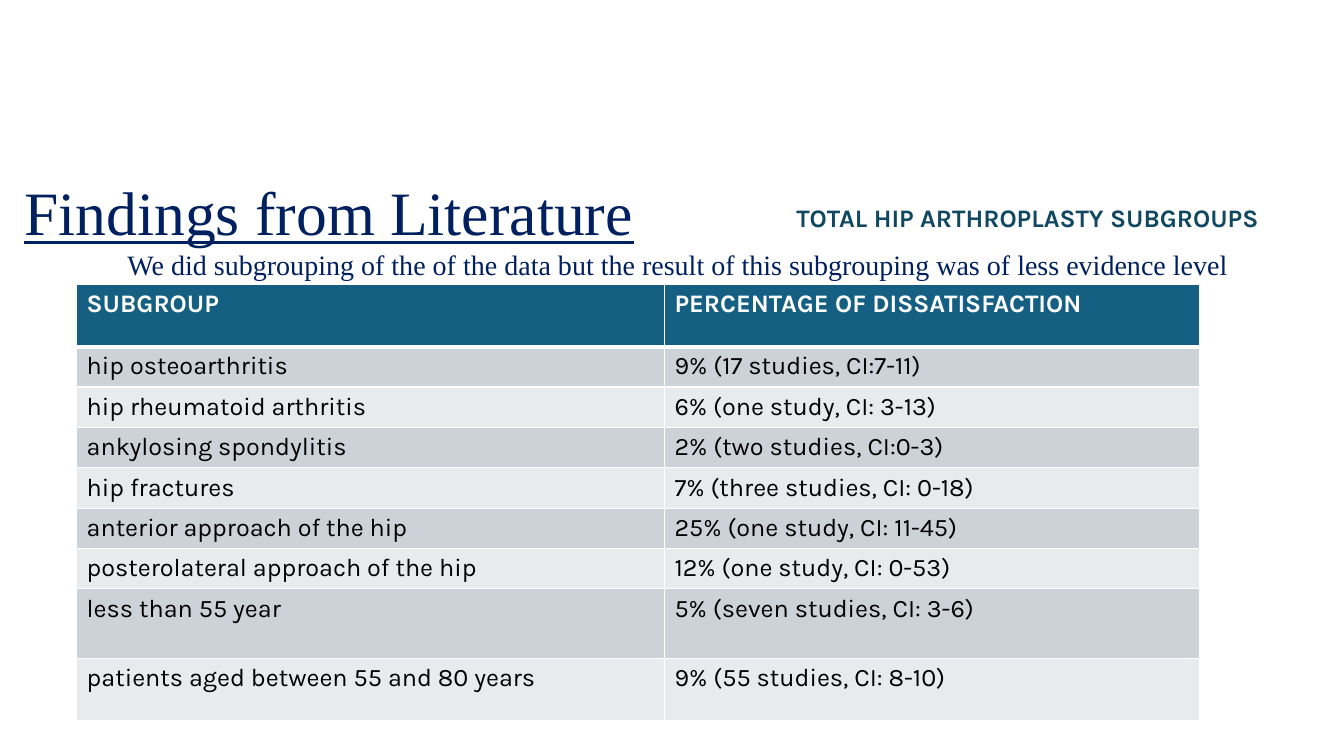
from lxml.etree import SubElement
from pptx import Presentation
from pptx.dml.color import RGBColor
from pptx.enum.text import MSO_ANCHOR, MSO_AUTO_SIZE, PP_ALIGN
from pptx.oxml.ns import qn
from pptx.util import Inches, Pt

NAVY = RGBColor(0x00, 0x20, 0x60)
TEAL = RGBColor(0x10, 0x48, 0x62)
HEADER_BLUE = RGBColor(0x15, 0x60, 0x82)
BAND_DARK = RGBColor(0xCC, 0xD2, 0xD8)
BAND_LIGHT = RGBColor(0xE8, 0xEA, 0xED)
WHITE = RGBColor(0xFF, 0xFF, 0xFF)
BLACK = RGBColor(0x00, 0x00, 0x00)

SERIF = "Times New Roman"
SANS = "Karla"

ROWS = [
    ("SUBGROUP", "PERCENTAGE OF DISSATISFACTION", 0.62),
    ("hip osteoarthritis", "9% (17 studies, CI:7-11)", 0.39),
    ("hip rheumatoid arthritis", "6% (one study, CI: 3-13)", 0.39),
    ("ankylosing spondylitis", "2% (two studies, CI:0-3)", 0.39),
    ("hip fractures", "7% (three studies, CI: 0-18)", 0.39),
    ("anterior approach of the hip", "25% (one study, CI: 11-45)", 0.39),
    ("posterolateral approach of the hip", "12% (one study, CI: 0-53)", 0.39),
    ("less than 55 year", "5% (seven studies, CI: 3-6)", 0.69),
    ("patients aged between 55 and 80 years", "9% (55 studies, CI: 8-10)", 0.62),
]
COLUMN_WIDTHS = (5.83, 5.31)


def write_text(frame, text, *, font, size, color, bold=False, underline=False,
               align=PP_ALIGN.LEFT, line_spacing=1.0):
    para = frame.paragraphs[0]
    para.alignment = align
    para.line_spacing = line_spacing
    span = para.add_run()
    span.text = text
    span.font.name = font
    span.font.size = Pt(size)
    span.font.color.rgb = color
    span.font.bold = bold
    span.font.underline = underline


def set_borders(cell, top, bottom):
    properties = cell._tc.get_or_add_tcPr()
    for side, width in (("L", 1), ("R", 1), ("T", top), ("B", bottom)):
        line = SubElement(properties, qn(f"a:ln{side}"), w=str(Pt(width)))
        fill = SubElement(line, qn("a:solidFill"))
        SubElement(fill, qn("a:srgbClr"), val=str(WHITE))


def place_title(page, left, top, width, height):
    title = page.shapes.title
    title.left, title.top = Inches(left), Inches(top)
    title.width, title.height = Inches(width), Inches(height)
    frame = title.text_frame
    frame.auto_size = MSO_AUTO_SIZE.NONE
    frame.vertical_anchor = MSO_ANCHOR.TOP
    frame.margin_top = Inches(0.09)
    write_text(frame, "Findings from Literature", font=SERIF, size=44,
               color=NAVY, underline=True, line_spacing=0.9)


def add_label(page, text, left, top, width, height, **text_format):
    box = page.shapes.add_textbox(Inches(left), Inches(top),
                                  Inches(width), Inches(height))
    box.text_frame.word_wrap = True
    write_text(box.text_frame, text, **text_format)


def add_subgroup_table(page, left, top):
    height = sum(row[-1] for row in ROWS)
    table = page.shapes.add_table(
        len(ROWS), len(COLUMN_WIDTHS), Inches(left), Inches(top),
        Inches(sum(COLUMN_WIDTHS)), Inches(height)).table
    for column, width in zip(table.columns, COLUMN_WIDTHS):
        column.width = Inches(width)
    for index, (*texts, row_height) in enumerate(ROWS):
        table.rows[index].height = Inches(row_height)
        header = index == 0
        band = BAND_DARK if index % 2 else BAND_LIGHT
        for cell, text in zip(table.rows[index].cells, texts):
            set_borders(cell, top=3 if index == 1 else 1,
                        bottom=3 if header else 1)
            cell.fill.solid()
            cell.fill.fore_color.rgb = HEADER_BLUE if header else band
            write_text(cell.text_frame, text, font=SANS, size=18,
                       color=WHITE if header else BLACK, bold=header)


def build_findings_slide(deck):
    page = deck.slides.add_slide(deck.slide_layouts[5])
    place_title(page, 0.14, 1.72, 11.5, 1.45)
    add_label(page, "We did subgrouping of the of the data but the result of "
              "this subgrouping was of less evidence level",
              0.14, 2.44, 13.17, 0.76, font=SERIF, size=20, color=NAVY,
              align=PP_ALIGN.CENTER, line_spacing=0.9)
    add_subgroup_table(page, 0.76, 2.82)
    add_label(page, "TOTAL HIP ARTHROPLASTY SUBGROUPS", 7.8, 1.96, 5.06, 0.4,
              font=SANS, size=18, color=TEAL, bold=True)


def main():
    deck = Presentation()
    deck.slide_width, deck.slide_height = Inches(13.33), Inches(7.5)
    build_findings_slide(deck)
    deck.save("out.pptx")


if __name__ == "__main__":
    main()
